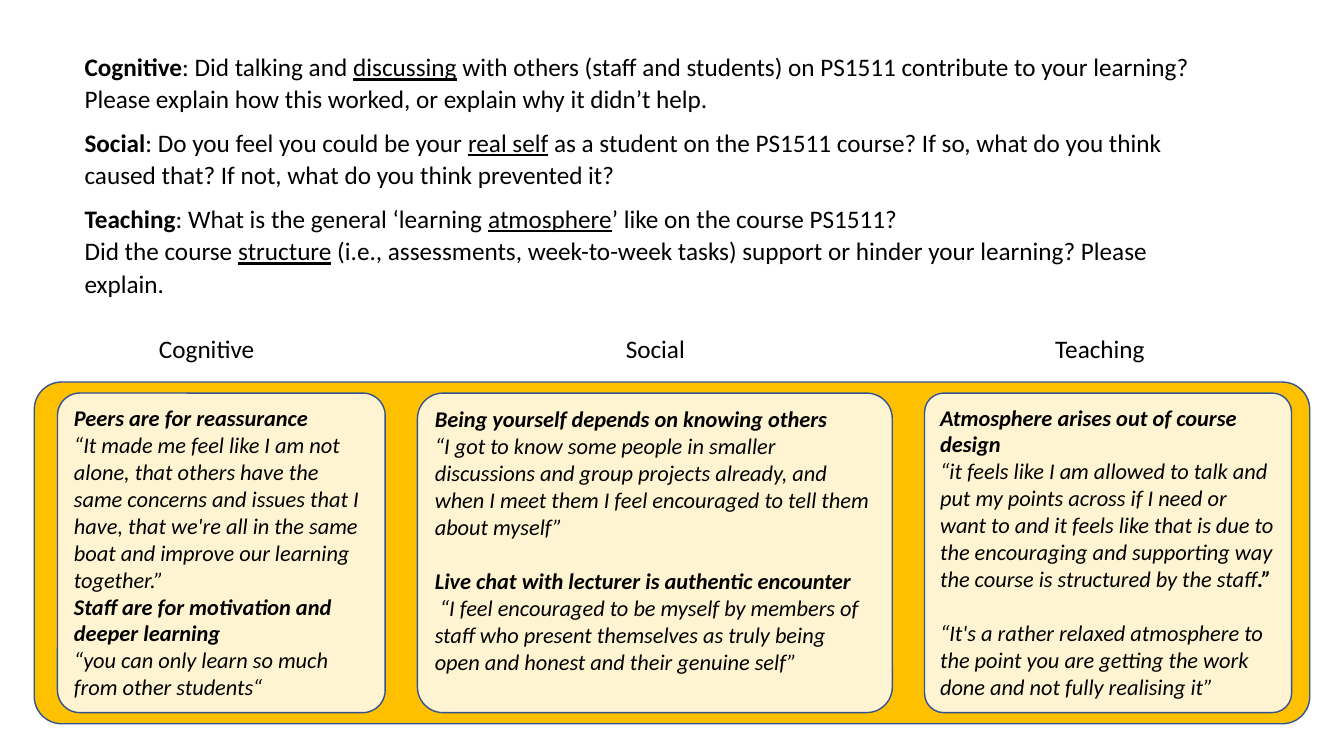
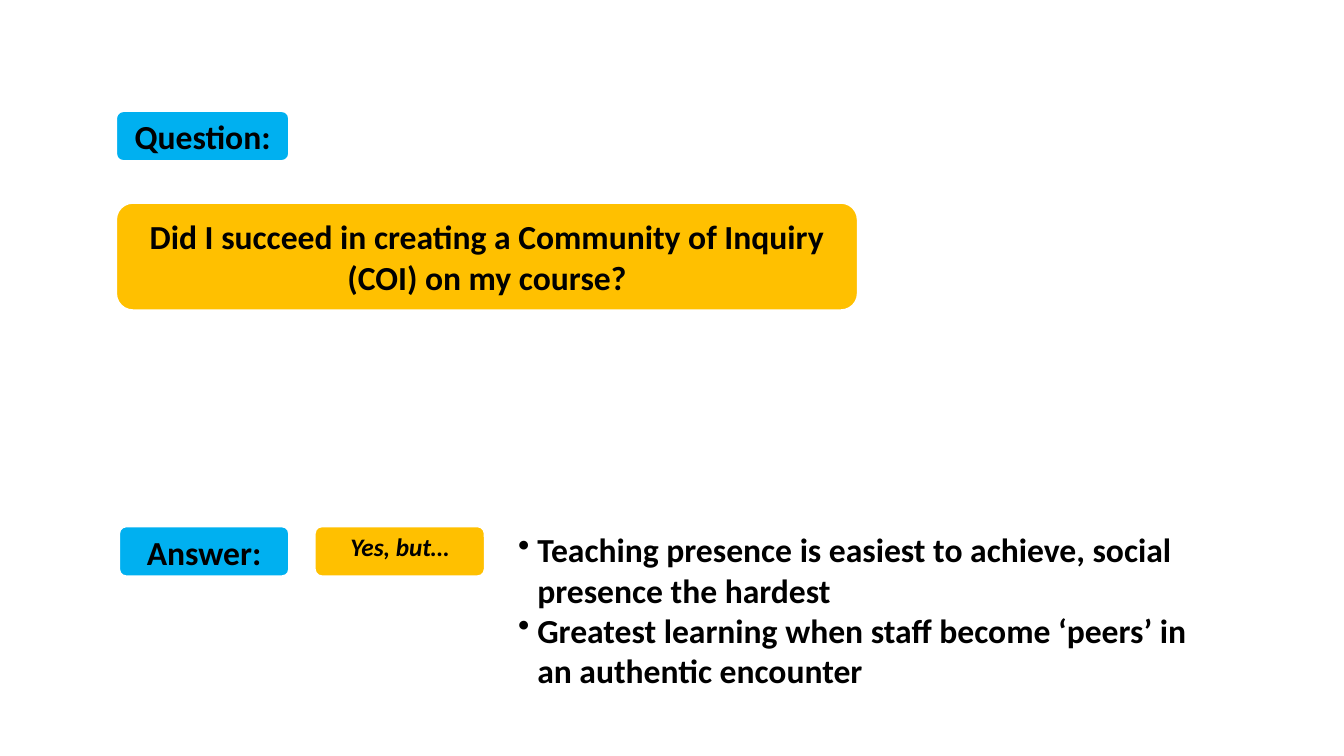
from dataclasses import dataclass

from lxml.etree import SubElement
from pptx import Presentation
from pptx.dml.color import RGBColor
from pptx.enum.shapes import MSO_SHAPE
from pptx.enum.text import MSO_ANCHOR, PP_ALIGN
from pptx.oxml.ns import qn
from pptx.util import Inches, Pt


@dataclass(frozen=True)
class Theme:
    font: str = "Calibri"
    text: RGBColor = RGBColor(0x00, 0x00, 0x00)
    white: RGBColor = RGBColor(0xFF, 0xFF, 0xFF)
    gold: RGBColor = RGBColor(0xFF, 0xC0, 0x00)
    cream: RGBColor = RGBColor(0xFF, 0xF4, 0xD1)
    blue: RGBColor = RGBColor(0x00, 0xB0, 0xF0)
    outline: RGBColor = RGBColor(0x32, 0x54, 0x91)
    quote_size: int = 16
    body_size: int = 18
    large_size: int = 24
    thin_line: float = 1
    thick_line: float = 4.5


THEME = Theme()

# Each paragraph is a list of (text, style) runs: b bold, u underlined
SURVEY_QUESTIONS = [
    [("Cognitive", "b"), (": Did talking and ", ""), ("discussing", "u"),
     (" with others (staff and students) on PS1511 contribute to your learning? "
      "Please explain how this worked, or explain why it didn’t help.", "")],
    [("Social", "b"), (": Do you feel you could be your ", ""), ("real self", "u"),
     (" as a student on the PS1511 course? If so, what do you think caused that? "
      "If not, what do you think prevented it?", "")],
    [("Teaching", "b"), (": What is the general ‘learning ", ""), ("atmosphere", "u"),
     ("’ like on the course PS1511?", "")],
    [("Did the course ", ""), ("structure", "u"),
     (" (i.e., assessments, week-to-week tasks) support or hinder your learning? "
      "Please explain.", "")],
]


@dataclass(frozen=True)
class Theme_Column:
    label: str
    label_centre: float
    width: float
    corner: float
    quotes: list
    gap_before: tuple = ()  # indexes of paragraphs that follow a one-line gap


COLUMNS = [
    Theme_Column("Cognitive", 2.05, 3.25, 0.07, [
        [("Peers are for reassurance", "b")],
        [("“It made me feel like I am not alone, that others have the same concerns "
          "and issues that I have, that we're all in the same boat and improve our "
          "learning together.”", "")],
        [("Staff are for motivation and deeper learning", "b")],
        [("“you can only learn so much from other students“", "")],
    ]),
    Theme_Column("Social", 6.5, 4.71, 0.08, [
        [("Being yourself depends on knowing others", "b")],
        [("“I got to know some people in smaller discussions and group projects "
          "already, and when I meet them I feel encouraged to tell them about "
          "myself”", "")],
        [("Live chat with lecturer is authentic encounter", "b")],
        [(" “I feel encouraged to be myself by members of staff who present "
          "themselves as truly being open and honest and their genuine self”", "")],
    ], (2,)),
    Theme_Column("Teaching", 10.91, 3.64, 0.06, [
        [("Atmosphere arises out of course design", "b")],
        [("“it feels like I am allowed to talk and put my points across if I need or "
          "want to and it feels like that is due to the encouraging and supporting "
          "way the course is structured by the staff", ""), (".”", "b")],
        [("“It's a rather relaxed atmosphere to the point you are getting the work "
          "done and not fully realising it”", "")],
    ], (2,)),
]

FINDINGS = [
    [("Teaching presence is easiest to achieve, social presence the hardest", "b")],
    [("Greatest learning when staff become ‘peers’ in an authentic encounter", "b")],
]


def write_text(shape, paragraphs, size, italic=False, align=PP_ALIGN.LEFT,
               anchor=MSO_ANCHOR.TOP):
    """Fill a shape with styled runs and return its paragraphs."""
    frame = shape.text_frame
    frame.word_wrap = True
    frame.vertical_anchor = anchor
    for index, runs in enumerate(paragraphs):
        paragraph = frame.add_paragraph() if index else frame.paragraphs[0]
        paragraph.alignment = align
        font = paragraph.font
        font.name, font.size, font.italic = THEME.font, Pt(size), italic
        font.color.rgb = THEME.text
        for text, style in runs:
            run = paragraph.add_run()
            run.text = text
            run.font.bold = "b" in style
            run.font.underline = "u" in style
    return frame.paragraphs


def add_text(slide, box, paragraphs, size, **style):
    text_box = slide.shapes.add_textbox(*map(Inches, box))
    return write_text(text_box, paragraphs, size, **style)


def add_panel(slide, box, fill, line, line_width, corner=0.17):
    shape = slide.shapes.add_shape(MSO_SHAPE.ROUNDED_RECTANGLE, *map(Inches, box))
    shape.adjustments[0] = corner
    shape.shadow.inherit = False
    shape.fill.solid()
    shape.fill.fore_color.rgb = fill
    shape.line.color.rgb = line
    shape.line.width = Pt(line_width)
    return shape


def add_badge(slide, box, text, fill, size=THEME.large_size, italic=False,
              anchor=MSO_ANCHOR.MIDDLE):
    """A white-edged rounded box with one centred bold text."""
    shape = add_panel(slide, box, fill, THEME.white, THEME.thick_line)
    write_text(shape, [[(text, "b")]], size, italic, PP_ALIGN.CENTER, anchor)


def add_bullet(paragraph, indent):
    properties = paragraph._p.get_or_add_pPr()
    properties.set("marL", str(Inches(indent)))
    properties.set("indent", str(-Inches(indent)))
    bullet = SubElement(properties, qn("a:buChar"))
    bullet.set("char", "•")
    # Bullets come before the default run properties in the schema
    defaults = properties.find(qn("a:defRPr"))
    if defaults is not None:
        defaults.addprevious(bullet)


def add_survey_questions(slide, box):
    paragraphs = add_text(slide, box, SURVEY_QUESTIONS, THEME.body_size)
    for index, paragraph in enumerate(paragraphs):
        paragraph.line_spacing = 1.07
        # The two teaching questions stay together
        paragraph.space_after = Pt(0 if index == 2 else 8)


def add_quote_board(slide, box):
    """A gold board holding one quote card per column, labelled above."""
    left, top, _, height = box
    margin, inset, gap = 0.23, 0.11, 0.32
    label_width, label_rise = 1.4, 0.53
    add_panel(slide, box, THEME.gold, THEME.outline, THEME.thin_line, 0.08)
    card_left = left + margin
    for column in COLUMNS:
        label_box = (column.label_centre - label_width / 2, top - label_rise,
                     label_width, 0.4)
        add_text(slide, label_box, [[(column.label, "")]], THEME.body_size,
                 align=PP_ALIGN.CENTER)
        card_box = (card_left, top + inset, column.width, height - 2 * inset)
        card = add_panel(slide, card_box, THEME.cream, THEME.outline,
                         THEME.thin_line, column.corner)
        paragraphs = write_text(card, column.quotes, THEME.quote_size, italic=True)
        for index in column.gap_before:
            paragraphs[index].space_before = Pt(19.5)
        card_left += column.width + gap


def add_question(slide, left, top):
    add_badge(slide, (left, top, 1.76, 0.54), "Question:", THEME.blue)
    add_badge(slide, (left, top + 0.91, 7.4, 1.11),
              "Did I succeed in creating a Community of Inquiry (COI) on my course?",
              THEME.gold)


def add_answer(slide, left, top):
    width, height, step = 1.73, 0.54, 1.94
    add_badge(slide, (left, top, width, height), "Answer:", THEME.blue,
              anchor=MSO_ANCHOR.TOP)
    add_badge(slide, (left + step, top, width, height), "Yes, but…", THEME.gold,
              THEME.body_size, italic=True, anchor=MSO_ANCHOR.TOP)
    findings_box = (left + 2 * step, top, 7.18, 1.72)
    for paragraph in add_text(slide, findings_box, FINDINGS, THEME.large_size):
        add_bullet(paragraph, 0.19)


def build_survey_slide(slide):
    add_survey_questions(slide, (0.74, 0.44, 11.51, 2.58))
    add_quote_board(slide, (0.34, 3.79, 12.65, 3.39))


def build_conclusion_slide(slide):
    add_question(slide, 1.13, 1.08)
    add_answer(slide, 1.16, 5.2)


def main():
    presentation = Presentation()
    presentation.slide_width = Inches(13.33)
    presentation.slide_height = Inches(7.5)
    blank_layout = presentation.slide_layouts[6]
    for build in (build_survey_slide, build_conclusion_slide):
        build(presentation.slides.add_slide(blank_layout))
    presentation.save("out.pptx")


if __name__ == "__main__":
    main()
